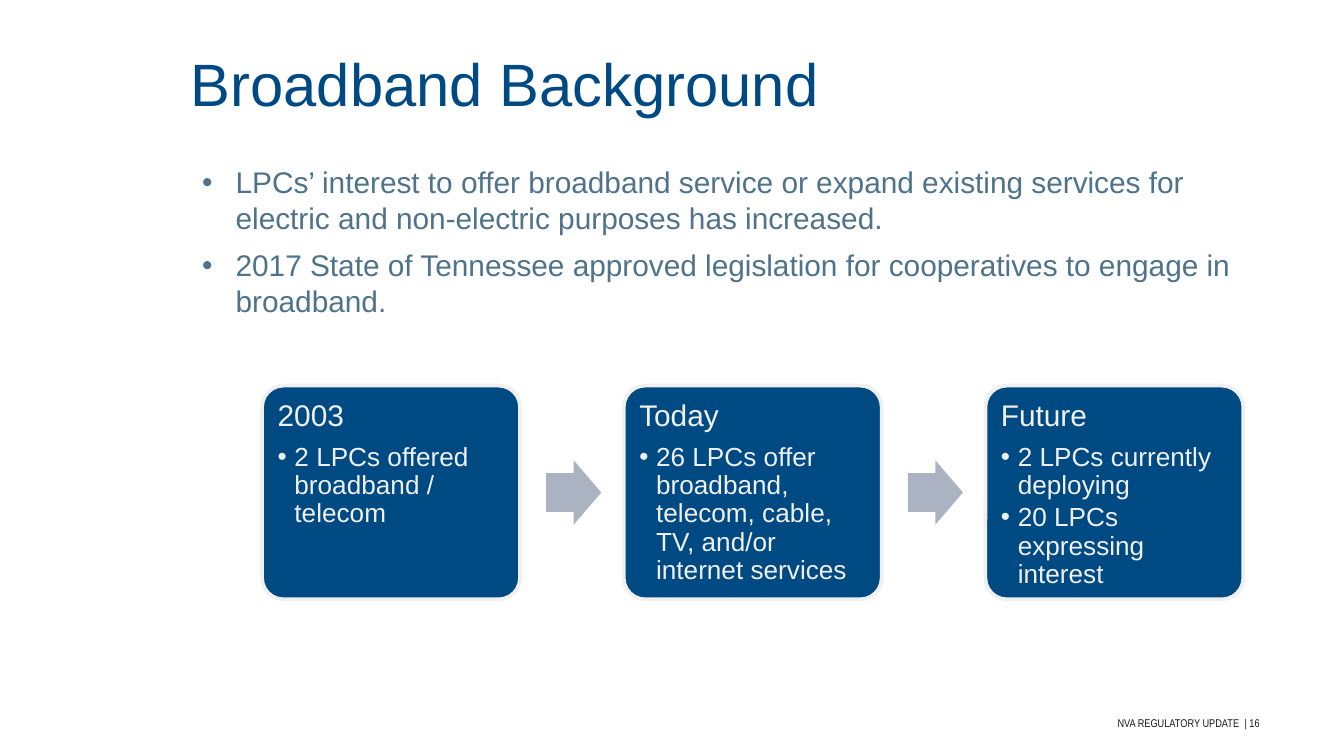
from lxml import etree
from pptx import Presentation
from pptx.dml.color import RGBColor
from pptx.enum.shapes import MSO_SHAPE
from pptx.enum.text import MSO_ANCHOR, MSO_AUTO_SIZE, PP_ALIGN
from pptx.oxml.ns import qn
from pptx.util import Pt

LEFT, RIGHT, TOP = PP_ALIGN.LEFT, PP_ALIGN.RIGHT, MSO_ANCHOR.TOP
ROUNDED, ARROW = MSO_SHAPE.ROUNDED_RECTANGLE, MSO_SHAPE.RIGHT_ARROW
NO_FIT = MSO_AUTO_SIZE.NONE

NAVY = RGBColor(0x00, 0x4A, 0x84)
SLATE = RGBColor(0x4F, 0x73, 0x8A)
PALE = RGBColor(0xF0, 0xF0, 0xF0)
GREY = RGBColor(0xAB, 0xB2, 0xC2)
INK = RGBColor(0x18, 0x18, 0x18)

BULLETS = [
    "LPCs’ interest to offer broadband service or expand existing services "
    "for electric and non-electric purposes has increased.",
    "2017 State of Tennessee approved legislation for cooperatives to engage "
    "in broadband.",
]
STAGES = [
    ("2003", ["2 LPCs offered broadband / telecom"]),
    ("Today", ["26 LPCs offer broadband, telecom, cable, TV, and/or internet services"]),
    ("Future", ["2 LPCs currently deploying", "20 LPCs expressing interest"]),
]
STAGE_LEFT, STAGE_TOP, STAGE_W, STAGE_H = 140.4, 206.6, 138.2, 114.5
STAGE_PITCH = 193.75
ARROW_W, ARROW_H, ARROW_OFFSET = 29.5, 34.5, 152.2


def place(s, left, top, width, height):
    s.left, s.top, s.width, s.height = (Pt(v) for v in (left, top, width, height))


def set_frame(tf, **insets):
    tf.word_wrap, tf.auto_size, tf.vertical_anchor = True, NO_FIT, TOP
    for side, value in insets.items():
        setattr(tf, f"margin_{side}", Pt(value))


def add_bullet(p, indent, hang):
    p.level = 1
    pPr = p._p.get_or_add_pPr()
    pPr.set("marL", str(Pt(indent)))
    pPr.set("indent", str(-Pt(hang)))
    font = etree.SubElement(pPr, qn("a:buFont"))
    font.set("typeface", "Arial")
    etree.SubElement(pPr, qn("a:buChar")).set("char", "•")


def write(p, text, size, color, name="Arial", **paragraph_format):
    for key, value in paragraph_format.items():
        setattr(p, key, value)
    r = p.add_run()
    r.text = text
    r.font.size, r.font.name = Pt(size), name
    r.font.color.rgb = color


def next_paragraph(tf, i):
    return tf.add_paragraph() if i else tf.paragraphs[0]


def add_title(slide):
    s = slide.shapes.title
    place(s, 95, 26, 625, 67.5)
    set_frame(s.text_frame)
    write(s.text_frame.paragraphs[0], "Broadband Background", 32, NAVY,
          alignment=LEFT, line_spacing=Pt(34))


def add_body(slide):
    s = slide.placeholders[1]
    place(s, 92, 84.3, 585, 258.5)
    set_frame(s.text_frame)
    for i, text in enumerate(BULLETS):
        p = next_paragraph(s.text_frame, i)
        add_bullet(p, 27, 18)
        write(p, text, 16, SLATE, space_before=Pt(6 if i else 0))


def add_filled(slide, kind, box, fill, adjustments):
    s = slide.shapes.add_shape(kind, *(Pt(v) for v in box))
    s.shadow.inherit = False
    s.fill.solid()
    s.fill.fore_color.rgb = fill
    s.line.fill.background()
    for i, value in enumerate(adjustments):
        s.adjustments[i] = value
    return s


def add_stage(slide, left, heading, items):
    s = add_filled(slide, ROUNDED, (left, STAGE_TOP, STAGE_W, STAGE_H), NAVY, [0.1])
    s.line.color.rgb, s.line.width = PALE, Pt(2)
    tf = s.text_frame
    set_frame(tf, left=5, top=5, right=5, bottom=5)
    write(tf.paragraphs[0], heading, 16, PALE,
          alignment=LEFT, line_spacing=0.9, space_after=Pt(5.6))
    for text in items:
        p = tf.add_paragraph()
        add_bullet(p, 9, 9)
        write(p, text, 14, PALE, alignment=LEFT, line_spacing=0.9, space_after=Pt(2.1))


def add_stages(slide):
    arrow_top = STAGE_TOP + (STAGE_H - ARROW_H) / 2
    for i, (heading, items) in enumerate(STAGES):
        left = STAGE_LEFT + i * STAGE_PITCH
        add_stage(slide, left, heading, items)
        if i < len(STAGES) - 1:
            add_filled(slide, ARROW, (left + ARROW_OFFSET, arrow_top, ARROW_W, ARROW_H),
                       GREY, [0.6, 0.5])


def add_footer_text(slide, x, width, text, alignment, **insets):
    s = slide.shapes.add_textbox(Pt(x), Pt(380.2), Pt(width), Pt(21.6))
    set_frame(s.text_frame, **insets)
    write(s.text_frame.paragraphs[0], text, 6, INK, "Arial Narrow", alignment=alignment)


def main():
    prs = Presentation()
    prs.slide_width, prs.slide_height = Pt(720), Pt(405)
    slide = prs.slides.add_slide(prs.slide_layouts[1])
    add_title(slide)
    add_footer_text(slide, 435.6, 228.2, "NVA REGULATORY UPDATE", RIGHT, right=0)
    add_footer_text(slide, 666.7, 22.3, "| 16", LEFT, left=0)
    add_body(slide)
    add_stages(slide)
    prs.save("out.pptx")


if __name__ == "__main__":
    main()
